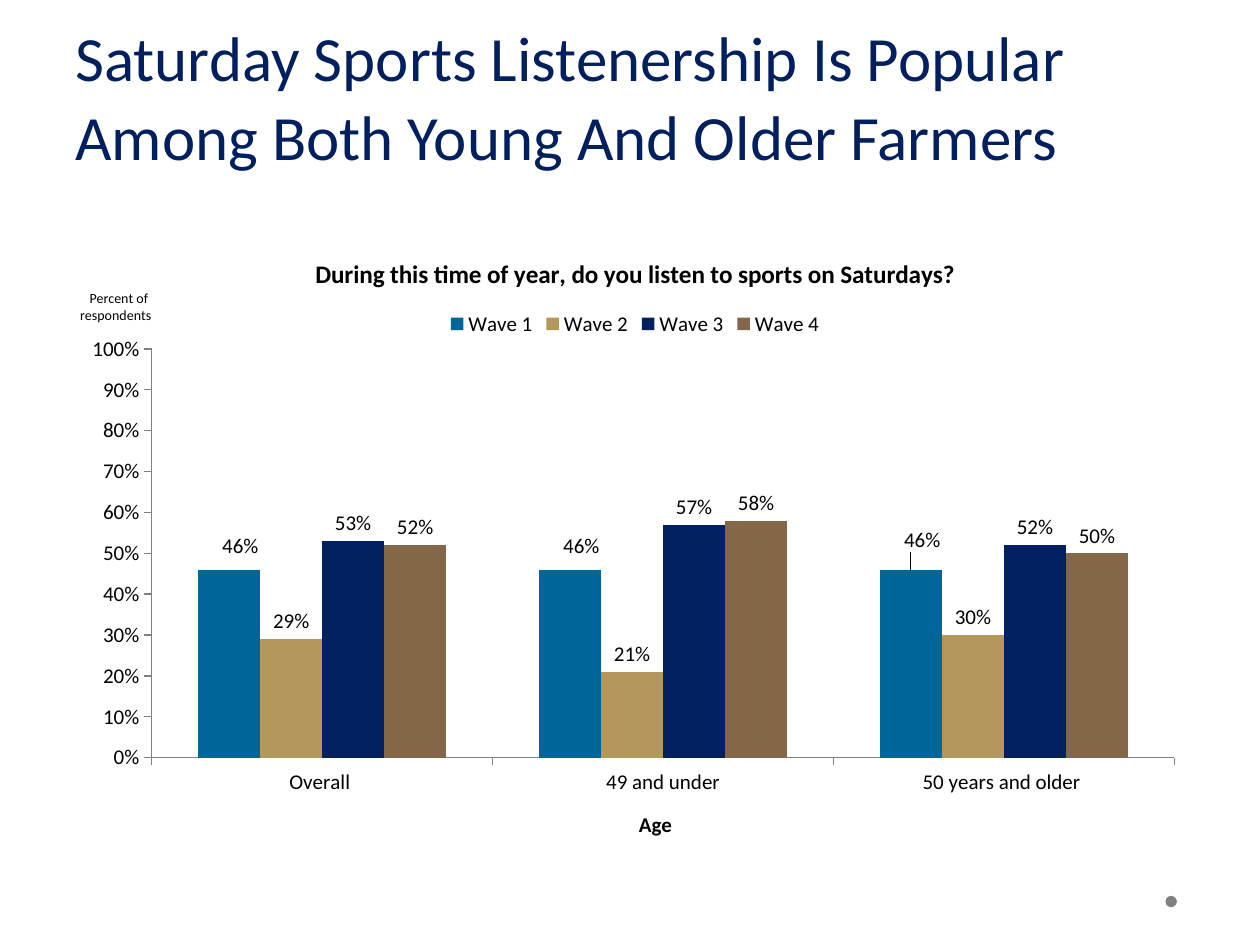
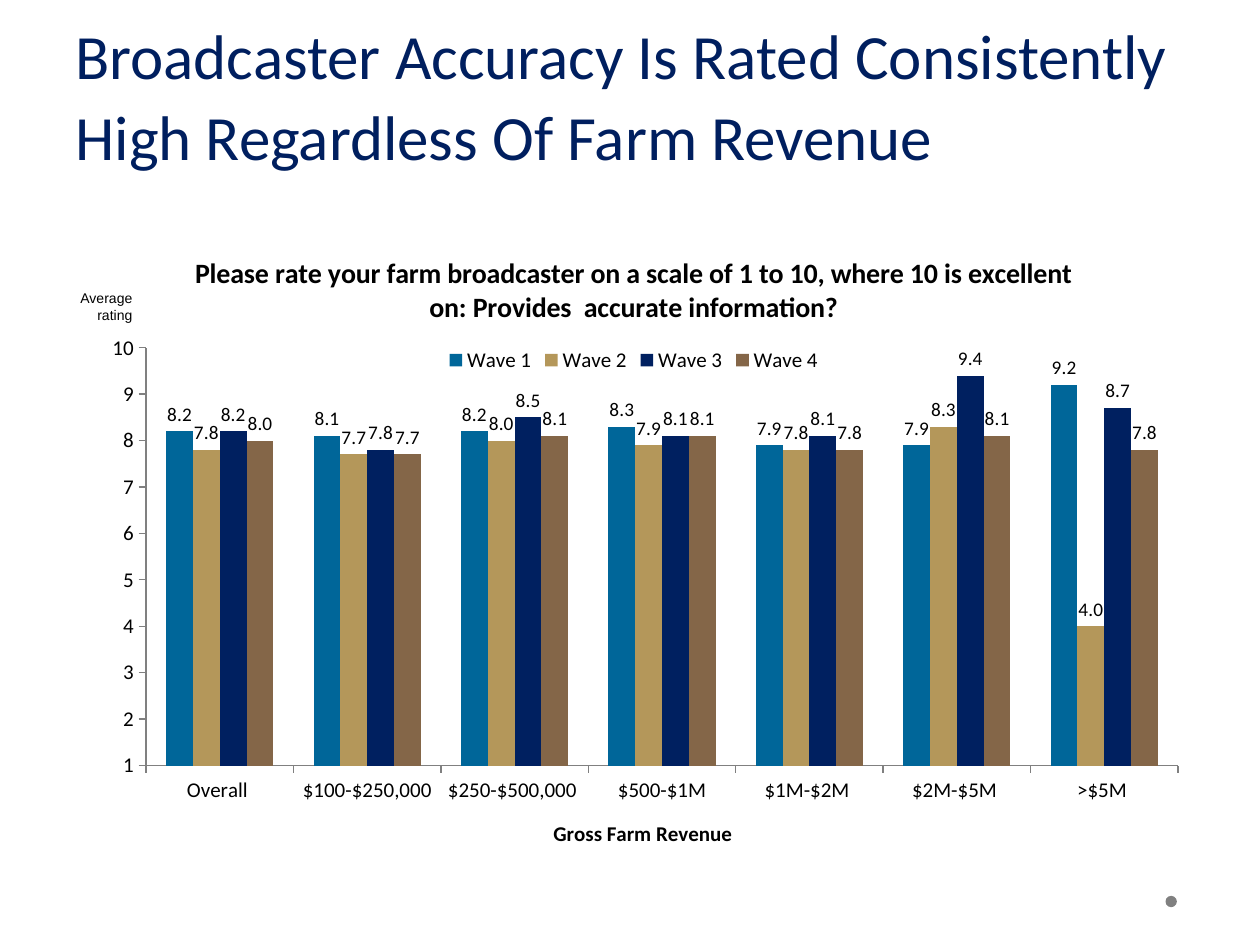
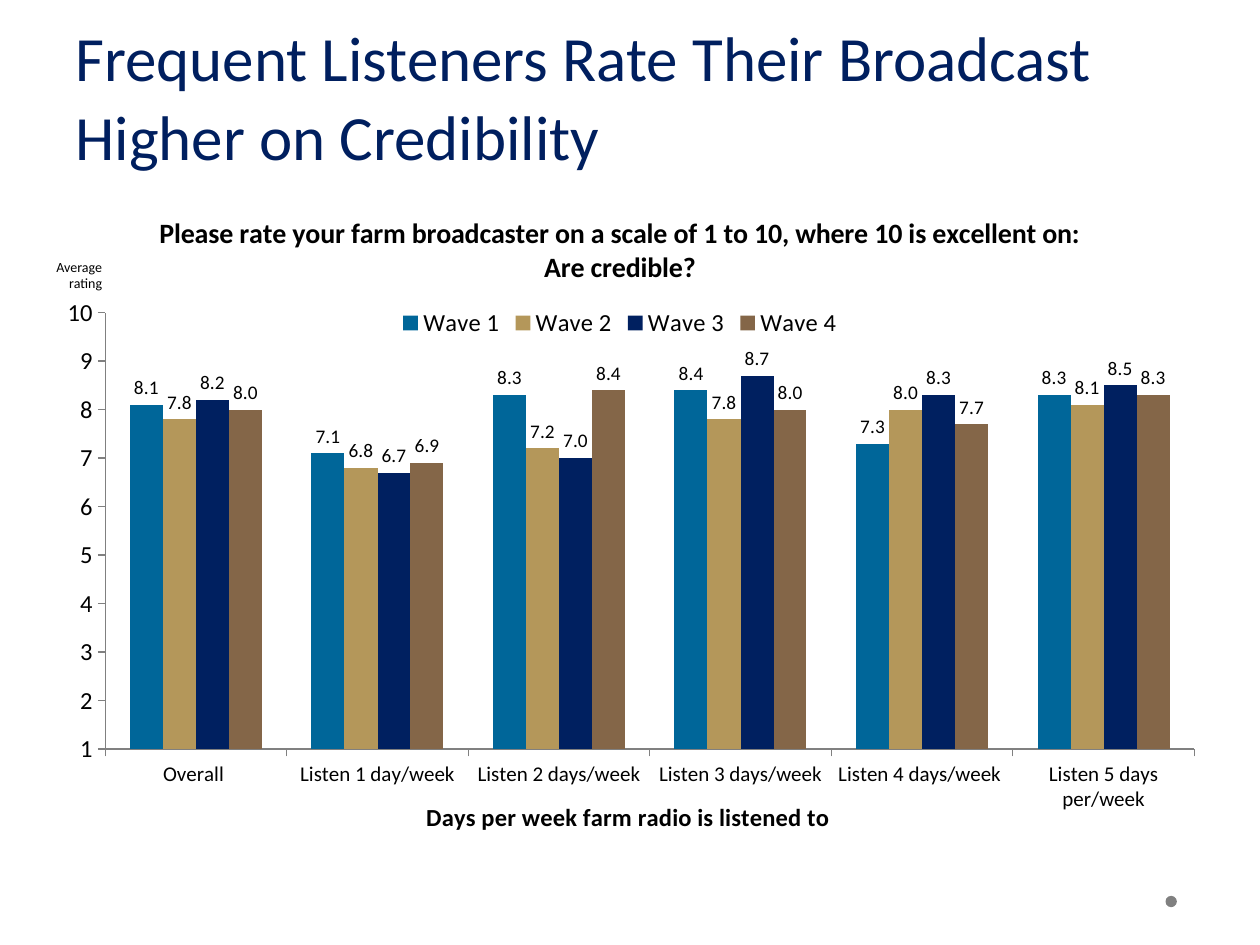
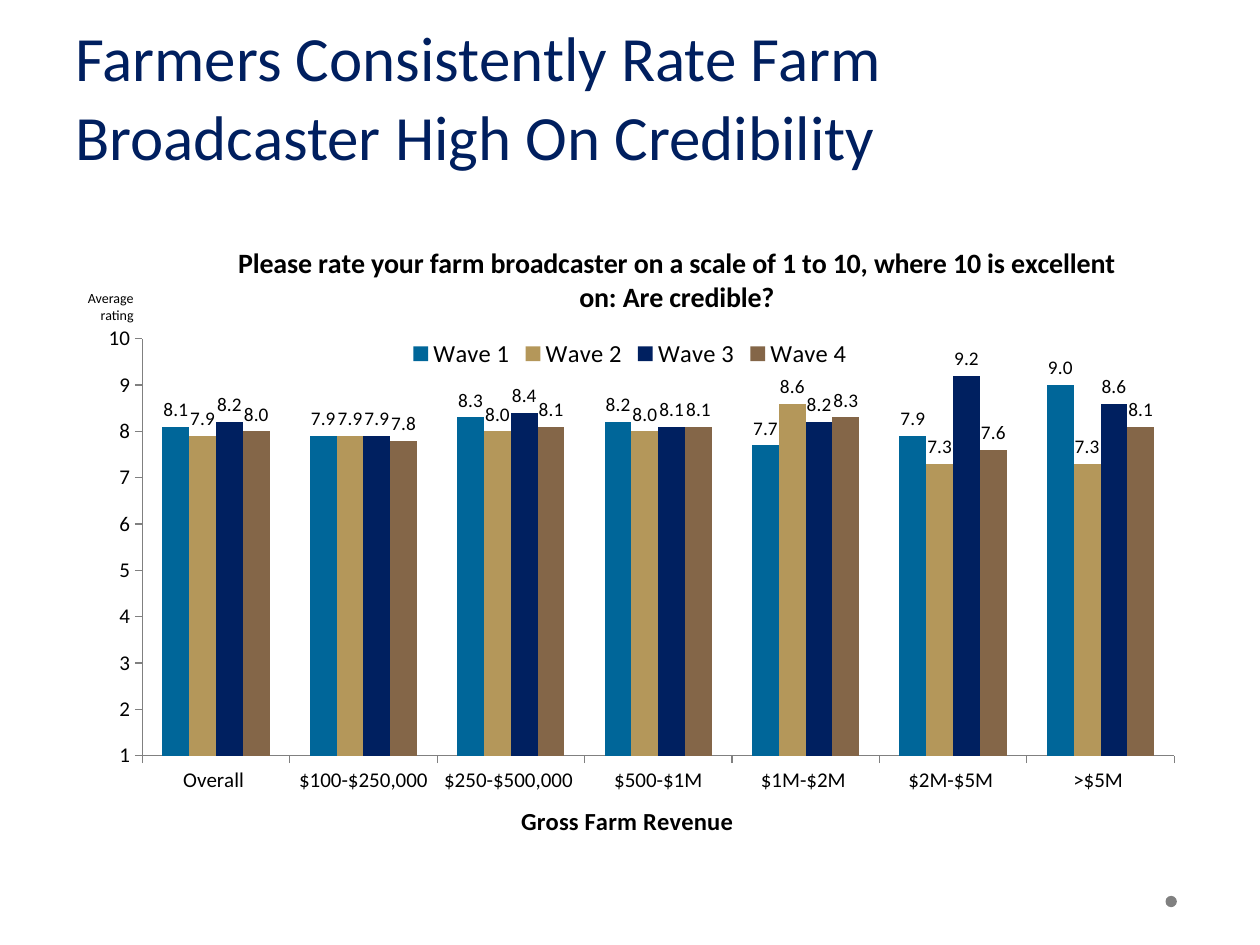
from lxml.etree import SubElement
from pptx import Presentation
from pptx.chart.data import CategoryChartData
from pptx.dml.color import RGBColor
from pptx.enum.chart import XL_CHART_TYPE, XL_LABEL_POSITION, XL_LEGEND_POSITION, XL_TICK_MARK
from pptx.enum.shapes import MSO_SHAPE
from pptx.enum.text import MSO_ANCHOR, MSO_AUTO_SIZE, PP_ALIGN
from pptx.oxml.ns import qn
from pptx.util import Pt

PX = 9144
FACE = "Calibri"
NAVY = RGBColor(0x00, 0x1F, 0x5F)
BLACK = RGBColor(0, 0, 0)
GREY = RGBColor(0x80, 0x80, 0x80)
TEAL = RGBColor(0x00, 0x66, 0x99)
GOLD = RGBColor(0xB4, 0x97, 0x5A)
BLUE = RGBColor(0x00, 0x20, 0x60)
BROWN = RGBColor(0x84, 0x66, 0x48)
WAVES = (TEAL, GOLD, BLUE, BROWN)
PLOT = {"x": 0.07, "y": 0.19, "w": 0.91, "h": 0.67}


def place(host, index, **spot):
    for old in host.findall(qn("c:layout")):
        host.remove(old)
    layout = SubElement(host, qn("c:layout"))
    host.insert(index, layout)
    manual = SubElement(layout, qn("c:manualLayout"))
    if "w" in spot:
        SubElement(manual, qn("c:layoutTarget")).set("val", "inner")
    if host.tag != qn("c:dLbl"):
        for side in "xy":
            SubElement(manual, qn(f"c:{side}Mode")).set("val", "edge")
    for key, value in spot.items():
        SubElement(manual, qn(f"c:{key}")).set("val", str(value))


class Deck:
    """Hold the shared style and the current slide."""

    def __init__(self):
        self.show = Presentation()
        self.show.slide_width = 1000 * PX
        self.show.slide_height = 750 * PX
        self.slide = None

    def ink(self, font, size, color=BLACK, bold=False, face=FACE):
        font.size, font.name, font.bold = Pt(size), face, bold
        font.color.rgb = color

    def page(self, title, pitch=45):
        self.slide = self.show.slides.add_slide(self.show.slide_layouts[6])
        self.dot()
        frame = self.box(50, 0, 900, 142)
        frame.word_wrap = True
        frame.vertical_anchor = MSO_ANCHOR.BOTTOM
        line = frame.paragraphs[0]
        line.text, line.line_spacing = title, Pt(pitch)
        self.ink(line.font, 36, NAVY)

    def box(self, *spot):
        return self.slide.shapes.add_textbox(*(n * PX for n in spot)).text_frame

    def dot(self):
        spot = (n * PX for n in (925, 711, 9, 9))
        dot = self.slide.shapes.add_shape(MSO_SHAPE.OVAL, *spot)
        dot.shadow.inherit = False
        dot.fill.solid()
        dot.fill.fore_color.rgb = GREY
        dot.line.fill.background()

    def unit(self, spot, words, face=FACE):
        frame = self.box(*spot, 37)
        frame.word_wrap = False
        frame.auto_size = MSO_AUTO_SIZE.SHAPE_TO_FIT_TEXT
        frame.text = "\n".join(words)
        for line in frame.paragraphs:
            line.alignment = PP_ALIGN.RIGHT
            self.ink(line.font, 8, face=face)

    def head(self, title, text, size, spot=None):
        title.text_frame.text = text
        self.ink(title.text_frame.paragraphs[0].font, size, bold=True)
        if spot:
            place(title.element, 1, x=spot[0], y=spot[1])

    def axis(self, axis, size):
        axis.has_major_gridlines = False
        axis.major_tick_mark = XL_TICK_MARK.OUTSIDE
        axis.minor_tick_mark = XL_TICK_MARK.NONE
        axis.format.line.color.rgb = GREY
        axis.format.line.width = Pt(0.75)
        self.ink(axis.tick_labels.font, size)

    def chart(self, spot, title, foot, cats, rows, size=12, scale=(1, 10, 1),
              form="0.0", ticks="0", tick=12, head=16, mark=11,
              title_at=None, foot_at=None):
        data = CategoryChartData(number_format=form)
        data.categories = cats
        for n, row in enumerate(rows, 1):
            data.add_series(f"Wave {n}", row)
        chart = self.slide.shapes.add_chart(
            XL_CHART_TYPE.COLUMN_CLUSTERED, *(n * PX for n in spot), data).chart
        self.ink(chart.font, size)
        self.head(chart.chart_title, title, head, title_at)
        chart.chart_title.include_in_layout = False
        chart.has_legend = True
        chart.legend.position = XL_LEGEND_POSITION.TOP
        chart.legend.include_in_layout = False
        self.ink(chart.legend.font, size)

        self.axis(chart.category_axis, 12)
        self.head(chart.category_axis.axis_title, foot, size, foot_at)
        value = chart.value_axis
        self.axis(value, tick)
        value.minimum_scale, value.maximum_scale, value.major_unit = scale
        value.tick_labels.number_format = ticks
        value.tick_labels.number_format_is_linked = False

        plot = chart.plots[0]
        plot.gap_width, plot.overlap, plot.vary_by_categories = 150, 0, False
        for bars, color in zip(plot.series, WAVES):
            bars.format.fill.solid()
            bars.format.fill.fore_color.rgb = color
            marks = bars.data_labels
            marks.show_value = True
            marks.position = XL_LABEL_POSITION.OUTSIDE_END
            marks.number_format = form
            marks.number_format_is_linked = False
            self.ink(marks.font, mark)
        place(chart.element.find(".//" + qn("c:plotArea")), 0, **PLOT)
        return chart

    def nudge(self, chart, shifts):
        bars = chart.plots[0].series[0]
        for n in range(len(shifts)):
            bars.points[n].data_label.position = XL_LABEL_POSITION.OUTSIDE_END
        for mark, (x, y) in zip(chart.element.iter(qn("c:dLbl")), shifts):
            place(mark, 1, x=x, y=y)


def main():
    deck = Deck()
    rate = "Please rate your farm broadcaster on a scale of 1 to 10, where 10 is excellent on: "
    rating = ("Average", "rating")
    sales = ("Overall ", "$100-$250,000", "$250-$500,000 ", "$500-$1M",
             "$1M-$2M ", "$2M-$5M ", ">$5M ")
    days = ("Overall ", "Listen 1 day/week", "Listen 2 days/week",
            "Listen 3 days/week", "Listen 4 days/week ", "Listen 5 days per/week")

    deck.page("Saturday Sports Listenership Is Popular Among Both Young And Older Farmers")
    sports = deck.chart(
        (58, 185, 892, 485), "During this time of year, do you listen to sports on Saturdays?",
        "Age ", ("Overall ", "49 and under", "50 years and older "),
        ((0.46, 0.46, 0.46), (0.29, 0.21, 0.3), (0.53, 0.57, 0.52), (0.52, 0.58, 0.5)),
        scale=(0, 1, 0.1), form="0%", ticks="0%", head=14.4, mark=12, foot_at=(0.5, 0.94))
    deck.nudge(sports, ((0.01, -0.01), (0.01, -0.01), (0.01, -0.02)))
    deck.unit((52, 225, 78), ("Percent of ", "respondents"))

    deck.page("Broadcaster Accuracy Is Rated Consistently High Regardless Of Farm Revenue", 46)
    deck.chart(
        (53, 182, 900, 495), rate + "Provides  accurate information?",
        "Gross Farm Revenue ", sales,
        ((8.2, 8.1, 8.2, 8.3, 7.9, 7.9, 9.2), (7.8, 7.7, 8, 7.9, 7.8, 8.3, 4),
         (8.2, 7.8, 8.5, 8.1, 8.1, 9.4, 8.7), (8, 7.7, 8.1, 8.1, 7.8, 8.1, 7.8)))
    deck.unit((53, 225, 62), rating, "Arial")

    deck.page("Frequent Listeners Rate Their Broadcast Higher on Credibility")
    deck.chart(
        (17, 150, 950, 517), rate + "Are credible?",
        "Days per week farm radio is listened to ", days,
        ((8.1, 7.1, 8.3, 8.4, 7.3, 8.3), (7.8, 6.8, 7.2, 7.8, 8, 8.1),
         (8.2, 6.7, 7, 8.7, 8.3, 8.5), (8, 6.9, 8.4, 8, 7.7, 8.3)),
        size=14, ticks="General", tick=14)
    deck.unit((33, 200, 58), rating)

    deck.page("Farmers Consistently Rate Farm Broadcaster High On Credibility")
    deck.chart(
        (50, 175, 900, 495), rate + "Are credible?", "Gross Farm Revenue ", sales,
        ((8.1, 7.9, 8.3, 8.2, 7.7, 7.9, 9), (7.9, 7.9, 8, 8, 8.6, 7.3, 7.3),
         (8.2, 7.9, 8.4, 8.1, 8.2, 9.2, 8.6), (8, 7.8, 8.1, 8.1, 8.3, 7.6, 8.1)),
        size=14, title_at=(0.15, 0.03), foot_at=(0.4, 0.93))
    deck.unit((58, 225, 58), rating)

    deck.show.save("out.pptx")


if __name__ == "__main__":
    main()
